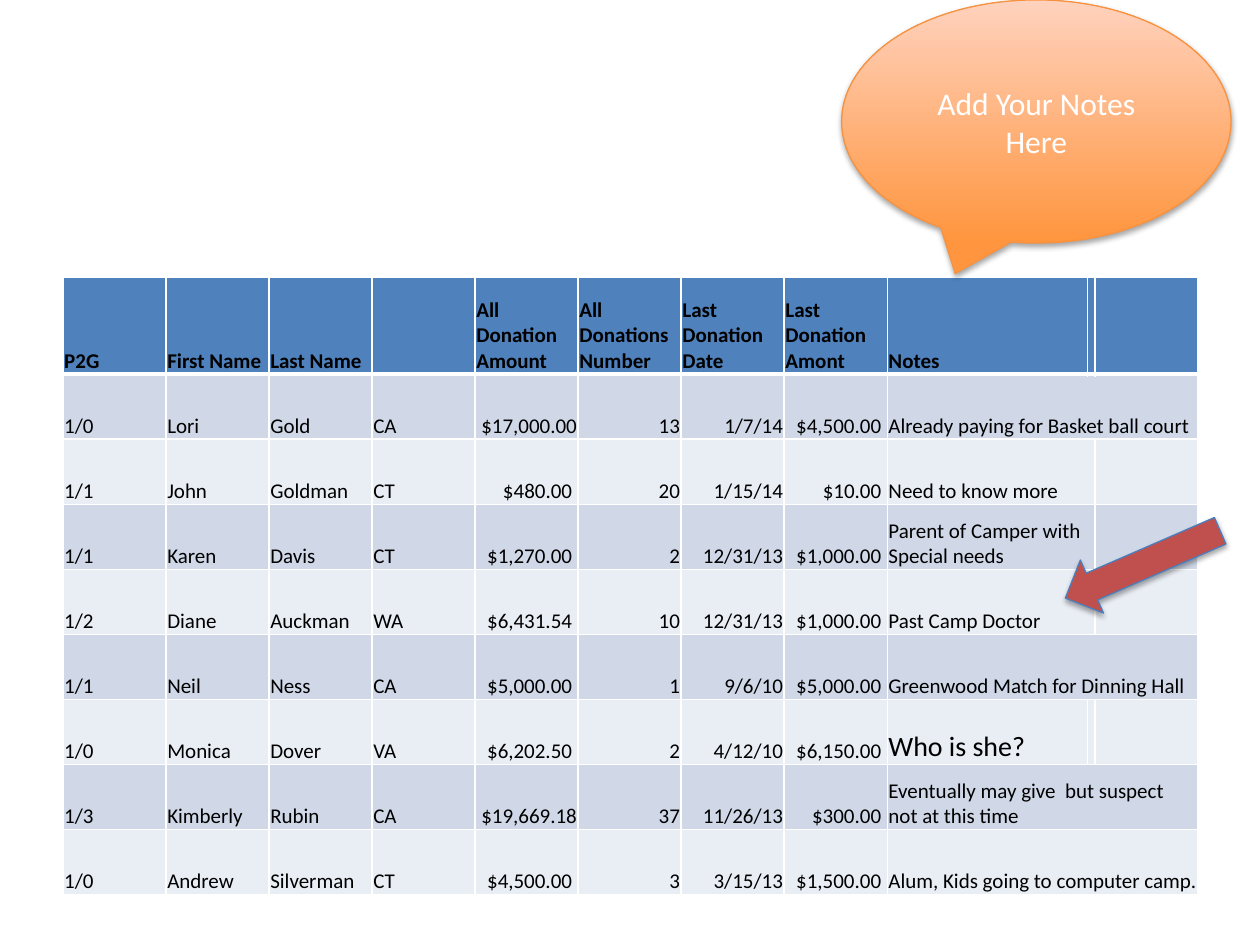
"""Builds a slide with a donor table, a notes callout and an arrow."""
import dataclasses

import lxml.etree
import pptx
import pptx.dml.color
import pptx.enum.shapes
import pptx.enum.text
import pptx.oxml.ns
import pptx.util

Inches = pptx.util.Inches
Pt = pptx.util.Pt
Align = pptx.enum.text.PP_ALIGN
Anchor = pptx.enum.text.MSO_ANCHOR
Shape = pptx.enum.shapes.MSO_SHAPE
qn = pptx.oxml.ns.qn


@dataclasses.dataclass(frozen=True)
class Theme:
    """Colours, font and type sizes of the slide."""
    font: str = "Calibri"
    ink: str = "000000"
    white: str = "FFFFFF"
    header: str = "4F81BD"
    bands: tuple = ("D0D8E8", "E9EDF4")
    callout: tuple = ("FF953E", "FFD2BD")
    callout_line: str = "F69240"
    arrow: str = "C0504D"
    arrow_line: str = "4B7EBC"
    cell_size: int = 12
    question_size: int = 16
    callout_size: int = 18


THEME = Theme()

HEADINGS = ["P2G", "First Name", "Last Name", "", "All Donation Amount",
            "All Donations Number", "Last Donation Date",
            "Last Donation Amont", "Notes"]
QUESTION = "Who is she?"
DONORS = [
    ("1/0", "Lori", "Gold", "CA", " $17,000.00 ", "13", "1/7/14",
     " $4,500.00 ", "Already paying for Basket ball court"),
    ("1/1", "John", "Goldman", "CT", " $480.00 ", "20", "1/15/14",
     " $10.00 ", "Need to know more"),
    ("1/1", "Karen", "Davis", "CT", " $1,270.00 ", "2", "12/31/13",
     " $1,000.00 ", "Parent of Camper with Special needs"),
    ("1/2", "Diane", "Auckman", "WA", " $6,431.54 ", "10", "12/31/13",
     " $1,000.00 ", "Past Camp Doctor"),
    ("1/1", "Neil", "Ness", "CA", " $5,000.00 ", "1", "9/6/10",
     " $5,000.00 ", "Greenwood Match for Dinning Hall"),
    ("1/0", "Monica", "Dover", "VA", " $6,202.50 ", "2", "4/12/10",
     " $6,150.00 ", QUESTION),
    ("1/3", "Kimberly", "Rubin", "CA", " $19,669.18 ", "37", "11/26/13",
     " $300.00 ", "Eventually may give  but suspect not at this time"),
    ("1/0", "Andrew", "Silverman", "CT", " $4,500.00 ", "3", "3/15/13",
     " $1,500.00 ", "Alum, Kids going to computer camp."),
]
NOTE_SPANS = [3, 2, 2, 2, 3, 1, 3, 3]
NOTES_COLUMN = 8
NUMBER_COLUMNS = range(4, 8)
TABLE_WIDTH, TABLE_HEIGHT = 9.01, 4.9
HEADER_HEIGHT = 0.77
SPECIAL_WIDTHS = {NOTES_COLUMN: 1.59, NOTES_COLUMN + 1: 0.06}
COLUMN_COUNT = 11


def rgb(value):
    """Return a colour object for a hex value."""
    return pptx.dml.color.RGBColor.from_string(value)


def write_text(frame, text, *, size, color, bold=False, align=Align.LEFT):
    """Write one formatted paragraph into a text frame."""
    paragraph = frame.paragraphs[0]
    paragraph.alignment = align
    run = paragraph.add_run()
    run.text = text
    run.font.name = THEME.font
    run.font.size = Pt(size)
    run.font.bold = bold
    run.font.color.rgb = rgb(color)


def set_borders(cell, **widths):
    """Give a cell white borders of 1 pt unless a side names its width."""
    properties = cell._tc.get_or_add_tcPr()
    for position, side in enumerate("LRTB"):
        line = lxml.etree.Element(
            qn(f"a:ln{side}"), w=str(Pt(widths.get(side, 1))))
        fill = lxml.etree.SubElement(line, qn("a:solidFill"))
        lxml.etree.SubElement(fill, qn("a:srgbClr"), val=THEME.white)
        properties.insert(position, line)


def style_cell(cell, fill, **widths):
    """Set the fill, margins, anchor and borders of a cell."""
    cell.fill.solid()
    cell.fill.fore_color.rgb = rgb(fill)
    cell.margin_left = cell.margin_right = cell.margin_top = Inches(0.01)
    cell.margin_bottom = 0
    cell.vertical_anchor = Anchor.BOTTOM
    set_borders(cell, **widths)


def size_table(table):
    """Share the table's width and height among columns and rows."""
    plain_width = ((TABLE_WIDTH - sum(SPECIAL_WIDTHS.values()))
                   / (COLUMN_COUNT - len(SPECIAL_WIDTHS)))
    for index, column in enumerate(table.columns):
        column.width = Inches(SPECIAL_WIDTHS.get(index, plain_width))
    body_height = (TABLE_HEIGHT - HEADER_HEIGHT) / len(DONORS)
    for index, row in enumerate(table.rows):
        row.height = Inches(body_height if index else HEADER_HEIGHT)


def add_donor_table(slide):
    """Add the table of donors with its header row and merged notes."""
    table = slide.shapes.add_table(
        len(DONORS) + 1, COLUMN_COUNT, Inches(0.5), Inches(2.2),
        Inches(TABLE_WIDTH), Inches(TABLE_HEIGHT)).table
    size_table(table)
    for cell in table.rows[0].cells:
        style_cell(cell, THEME.header, B=3)
    for column, heading in enumerate(HEADINGS):
        if heading:
            write_text(table.cell(0, column).text_frame, heading,
                       size=THEME.cell_size, color=THEME.ink, bold=True)
    for row, (donor, span) in enumerate(zip(DONORS, NOTE_SPANS), start=1):
        for cell in table.rows[row].cells:
            style_cell(cell, THEME.bands[(row - 1) % 2], T=3 if row == 1 else 1)
        if span > 1:
            table.cell(row, NOTES_COLUMN).merge(
                table.cell(row, NOTES_COLUMN + span - 1))
        for column, value in enumerate(donor):
            write_text(
                table.cell(row, column).text_frame, value, color=THEME.ink,
                size=THEME.question_size if value == QUESTION else THEME.cell_size,
                align=Align.RIGHT if column in NUMBER_COLUMNS else Align.LEFT)


def add_shadowed_shape(slide, kind, left, top, width, height, line):
    """Add a preset shape with a thin line and a soft shadow below it."""
    shape = slide.shapes.add_shape(
        kind, Inches(left), Inches(top), Inches(width), Inches(height))
    shape.line.color.rgb = rgb(line)
    shape.line.width = Pt(0.75)
    shape.shadow.inherit = False
    effects = shape._element.spPr.find(qn("a:effectLst"))
    shadow = lxml.etree.SubElement(
        effects, qn("a:outerShdw"), blurRad=str(Pt(3.1)), dist=str(Pt(1.8)),
        dir="5400000", rotWithShape="0")
    color = lxml.etree.SubElement(shadow, qn("a:srgbClr"), val=THEME.ink)
    lxml.etree.SubElement(color, qn("a:alpha"), val="35000")
    return shape


def add_notes_callout(slide):
    """Add the orange speech bubble that points at the notes column."""
    callout = add_shadowed_shape(slide, Shape.OVAL_CALLOUT, 6.68, 0, 3.09, 1.93,
                                 THEME.callout_line)
    callout.fill.gradient()
    callout.fill.gradient_angle = 90
    for stop, position, color in zip(
            callout.fill.gradient_stops, (0, 1), THEME.callout):
        stop.position = position
        stop.color.rgb = rgb(color)
    callout.text_frame.word_wrap = True
    callout.text_frame.vertical_anchor = Anchor.MIDDLE
    write_text(callout.text_frame, "Add Your Notes Here", align=Align.CENTER,
               size=THEME.callout_size, color=THEME.white)


def add_note_arrow(slide):
    """Add the red arrow that points at a note."""
    arrow = add_shadowed_shape(slide, Shape.LEFT_ARROW, 8.4, 4.25, 1.34, 0.46,
                               THEME.arrow_line)
    arrow.rotation = 336.5
    arrow.fill.solid()
    arrow.fill.fore_color.rgb = rgb(THEME.arrow)


def main():
    """Build the slide and save it."""
    deck = pptx.Presentation()
    deck.slide_width, deck.slide_height = Inches(10), Inches(7.5)
    slide = deck.slides.add_slide(deck.slide_layouts[6])
    add_donor_table(slide)
    add_notes_callout(slide)
    add_note_arrow(slide)
    deck.save("out.pptx")


if __name__ == "__main__":
    main()
